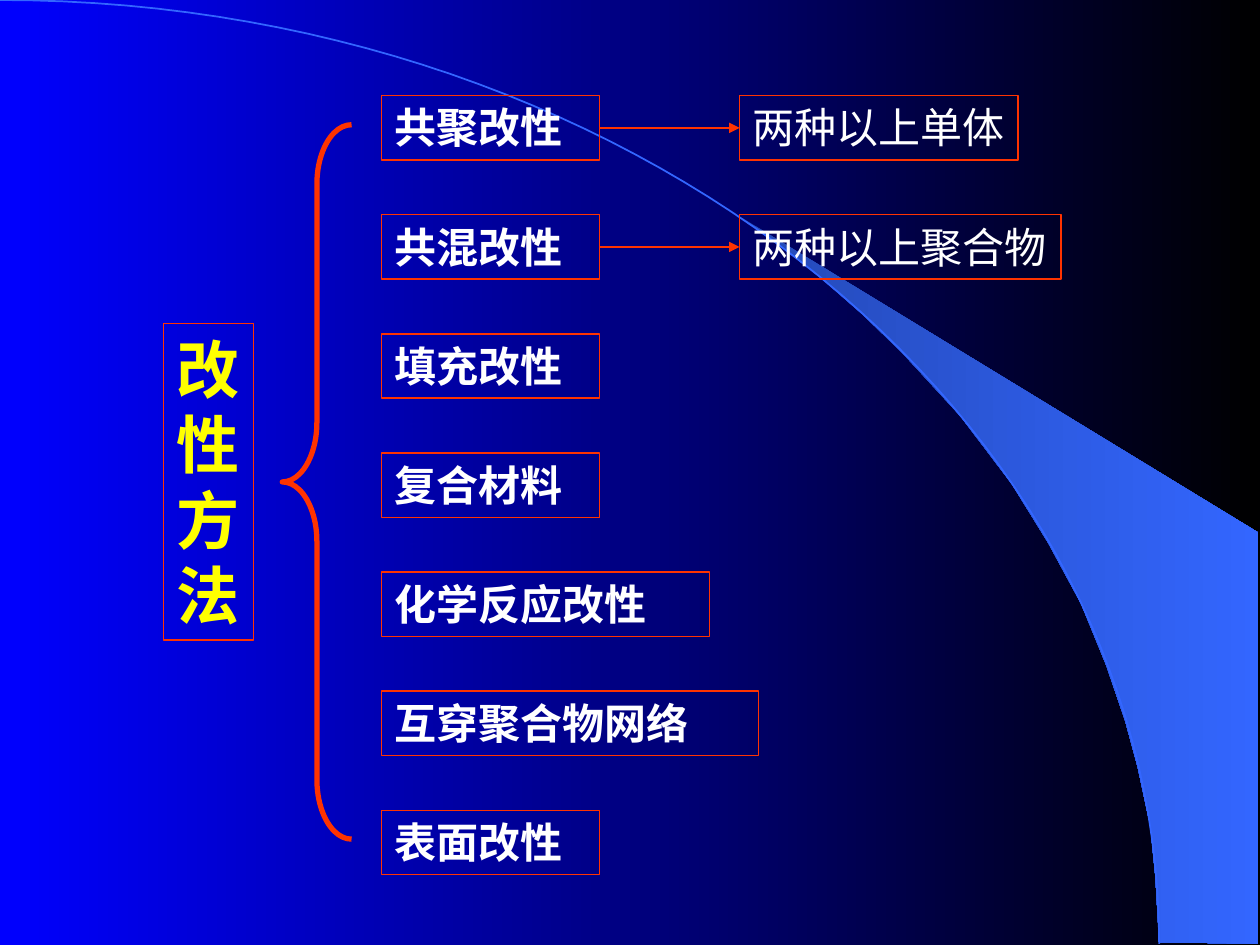
import pptx
import pptx.util
import pptx.dml.color
import pptx.enum.shapes
import pptx.enum.text
import pptx.oxml.ns
from lxml import etree

Inches = pptx.util.Inches
Pt = pptx.util.Pt
RGBColor = pptx.dml.color.RGBColor
PP_ALIGN = pptx.enum.text.PP_ALIGN

BLUE = RGBColor(0x00, 0x00, 0xFF)
BLACK = RGBColor(0x00, 0x00, 0x00)
WEDGE_DARK = RGBColor(0x24, 0x49, 0xB6)
WEDGE_LIGHT = RGBColor(0x33, 0x66, 0xFF)
RED = RGBColor(0xFF, 0x33, 0x00)
YELLOW = RGBColor(0xFF, 0xFF, 0x00)
WHITE = RGBColor(0xFF, 0xFF, 0xFF)
FONT = "Times New Roman"

ROW_PITCH = 0.945
BOX_HEIGHT = 0.51
# Method, width of its box, and what it is made of with that box's width
METHODS = [
    ("共聚改性", 1.73, ("两种以上单体", 2.21)),
    ("共混改性", 1.73, ("两种以上聚合物", 2.55)),
    ("填充改性", 1.73, None),
    ("复合材料", 1.73, None),
    ("化学反应改性", 2.6, None),
    ("互穿聚合物网络", 2.99, None),
    ("表面改性", 1.73, None),
]
WEDGE_POINTS = [
    (9.2, 7.48), (9.99, 7.49), (9.99, 4.23), (5.89, 1.73), (6.24, 1.99),
    (6.53, 2.22), (6.85, 2.5), (7.16, 2.8), (7.62, 3.3), (8.03, 3.84),
    (8.32, 4.31), (8.58, 4.79), (8.78, 5.28), (8.93, 5.72), (9.03, 6.09),
    (9.13, 6.56), (9.17, 6.96),
]


def fill_gradient(fill, start, end):
    fill.gradient()
    fill.gradient_angle = 0
    for stop, color, position in zip(fill.gradient_stops, (start, end), (0, 1)):
        stop.color.rgb = color
        stop.position = position


def add_outline(slide, points, close):
    points = [(Inches(x), Inches(y)) for x, y in points]
    builder = slide.shapes.build_freeform(*points[0])
    builder.add_line_segments(points[1:], close=close)
    outline = builder.convert_to_shape()
    outline.shadow.inherit = False
    return outline


def arc_points(width, height, steps=60):
    """Points of a quarter arc from the top left to the bottom right."""
    points = []
    for step in range(steps + 1):
        t = step / steps
        u = 1 - t
        x = width * (3 * u * u * t * 0.552 + 3 * u * t * t + t ** 3)
        y = height * (3 * u * t * t * 0.448 + t ** 3)
        points.append((x, y))
    return points


def add_backdrop(slide):
    fill_gradient(slide.background.fill, BLUE, BLACK)
    wedge = add_outline(slide, WEDGE_POINTS, close=True)
    fill_gradient(wedge.fill, WEDGE_DARK, WEDGE_LIGHT)
    wedge.line.fill.background()
    arc = add_outline(slide, arc_points(9.2, 7.49), close=False)
    arc.fill.background()
    arc.line.color.rgb = WEDGE_LIGHT
    arc.line.width = Pt(1)


def add_framed_text(slide, box, lines, size=24, color=WHITE, bold=True,
                    wrap=True, align=PP_ALIGN.LEFT):
    framed = slide.shapes.add_textbox(*map(Inches, box))
    framed.line.color.rgb = RED
    framed.line.width = Pt(0.75)
    frame = framed.text_frame
    frame.word_wrap = wrap
    frame.auto_size = pptx.enum.text.MSO_AUTO_SIZE.SHAPE_TO_FIT_TEXT
    for index, line in enumerate(lines):
        paragraph = frame.add_paragraph() if index else frame.paragraphs[0]
        paragraph.alignment = align
        run = paragraph.add_run()
        run.text = line
        run.font.name = FONT
        run.font.size = Pt(size)
        run.font.bold = bold
        run.font.color.rgb = color
    return framed


def add_arrow(slide, source, target):
    arrow = slide.shapes.add_connector(
        pptx.enum.shapes.MSO_CONNECTOR.STRAIGHT, 0, 0, 0, 0)
    arrow.begin_connect(source, 3)
    arrow.end_connect(target, 1)
    arrow.line.color.rgb = RED
    arrow.line.width = Pt(0.75)
    qn = pptx.oxml.ns.qn
    etree.SubElement(arrow.line._get_or_add_ln(), qn("a:tailEnd"), type="triangle")
    etree.SubElement(arrow._element.spPr, qn("a:effectLst"))


def add_brace(slide, box):
    brace = slide.shapes.add_shape(
        pptx.enum.shapes.MSO_SHAPE.LEFT_BRACE, *map(Inches, box))
    brace.adjustments[0] = 0.859
    brace.adjustments[1] = 0.5
    brace.shadow.inherit = False
    brace.fill.background()
    brace.line.color.rgb = RED
    brace.line.width = Pt(3)


def add_methods(slide, left, top):
    """Column of methods, with arrows to their ingredients."""
    for row, (method, width, ingredients) in enumerate(METHODS):
        y = top + row * ROW_PITCH
        method_box = add_framed_text(
            slide, (left, y, width, BOX_HEIGHT), [method], align=PP_ALIGN.JUSTIFY)
        if ingredients:
            name, name_width = ingredients
            ingredient_box = add_framed_text(
                slide, (left + 2.84, y, name_width, BOX_HEIGHT), [name],
                bold=False, wrap=False)
            add_arrow(slide, method_box, ingredient_box)


def main():
    presentation = pptx.Presentation()
    presentation.slide_width = Inches(10)
    presentation.slide_height = Inches(7.5)
    slide = presentation.slides.add_slide(presentation.slide_layouts[6])
    add_backdrop(slide)
    add_framed_text(slide, (1.3, 2.57, 0.71, 2.51), "改性方法",
                    size=36, color=YELLOW, wrap=False)
    add_brace(slide, (2.24, 0.99, 0.55, 5.67))
    add_methods(slide, 3.03, 0.76)
    presentation.save("out.pptx")


if __name__ == "__main__":
    main()
